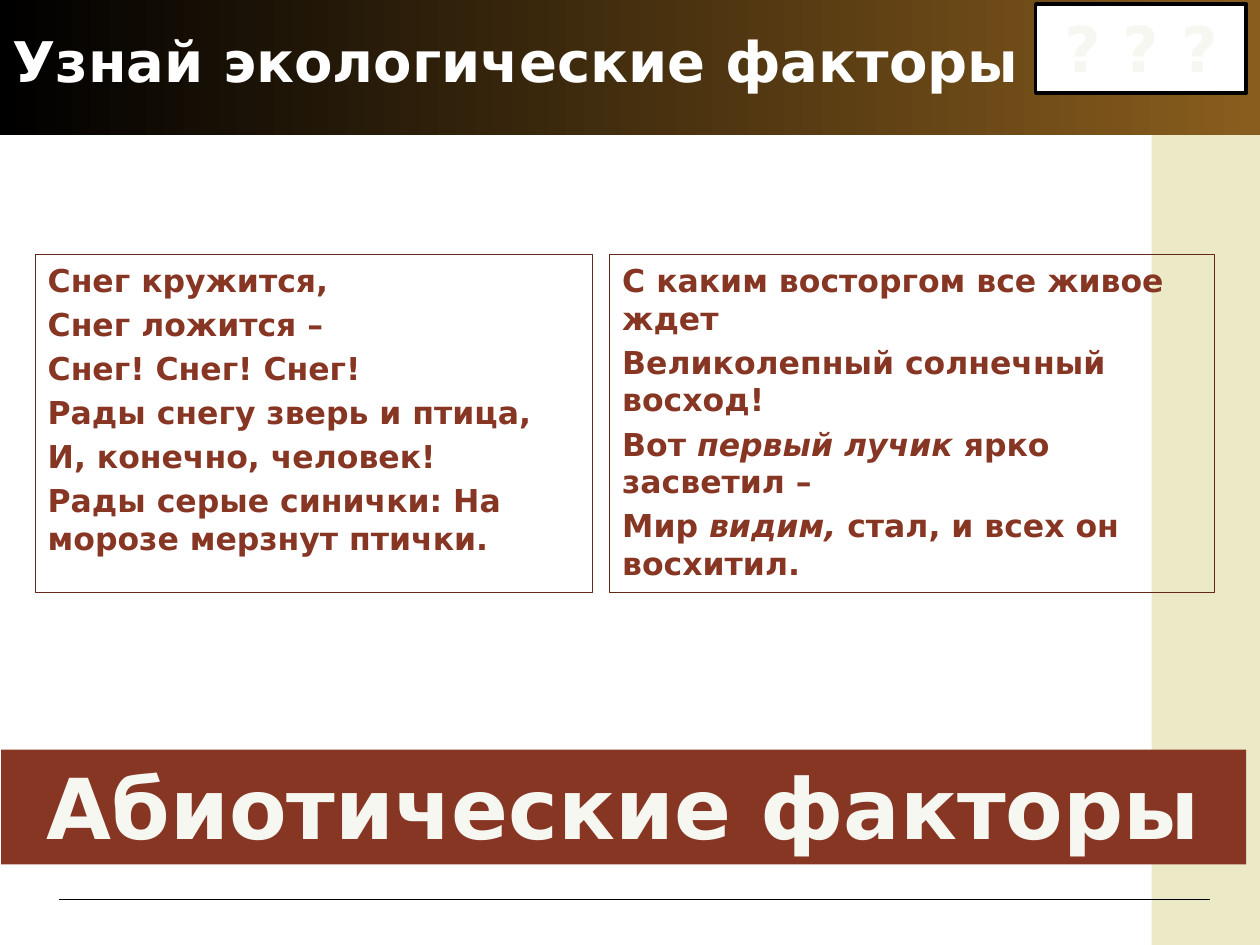
from dataclasses import dataclass

import pptx
import pptx.dml.color
import pptx.enum.shapes
import pptx.enum.text
import pptx.oxml.ns
import pptx.util
from lxml import etree

Inches = pptx.util.Inches
Pt = pptx.util.Pt
Align = pptx.enum.text.PP_ALIGN
Anchor = pptx.enum.text.MSO_ANCHOR


@dataclass(frozen=True)
class Theme:
    font: str = "DejaVu Sans"
    white: str = "FFFFFF"
    black: str = "000000"
    gold: str = "895D1D"
    sand: str = "ECE9C6"
    brick: str = "873624"
    brick_dark: str = "64281B"
    ivory: str = "F6F7F1"
    title_size: int = 32
    poem_size: int = 18
    question_size: int = 36
    answer_size: int = 48


THEME = Theme()

SNOW_POEM = [
    ["Снег кружится,"],
    ["Снег ложится –"],
    ["Снег! Снег! Снег!"],
    ["Рады снегу зверь и птица,"],
    ["И, конечно, человек!"],
    ["Рады серые синички: На морозе мерзнут птички."],
]
SUNRISE_POEM = [
    ["С каким восторгом все живое ждет"],
    ["Великолепный солнечный восход!"],
    ["Вот ", "первый лучик", " ярко засветил –"],
    ["Мир ", "видим,", " стал, и всех он восхитил."],
]


def rgb(value):
    return pptx.dml.color.RGBColor.from_string(value)


def add_box(slide, box, fill=None, line=None, line_width=0.75):
    shape = slide.shapes.add_shape(
        pptx.enum.shapes.MSO_SHAPE.RECTANGLE, *map(Inches, box)
    )
    shape.shadow.inherit = False
    if fill:
        shape.fill.solid()
        shape.fill.fore_color.rgb = rgb(fill)
    else:
        shape.fill.background()
    if line:
        shape.line.color.rgb = rgb(line)
        shape.line.width = Pt(line_width)
    else:
        shape.line.fill.background()
    return shape


def write_lines(shape, lines, size, color, align=Align.LEFT, anchor=Anchor.TOP):
    text_frame = shape.text_frame
    text_frame.word_wrap = True
    text_frame.vertical_anchor = anchor
    for index, parts in enumerate(lines):
        paragraph = text_frame.paragraphs[0] if index == 0 else text_frame.add_paragraph()
        paragraph.alignment = align
        if index:
            paragraph.space_before = Pt(0.2 * size)
        for position, part in enumerate(parts):
            run = paragraph.add_run()
            run.text = part
            run.font.name = THEME.font
            run.font.size = Pt(size)
            run.font.bold = True
            run.font.italic = position % 2 == 1
            run.font.color.rgb = rgb(color)


def add_backdrop(slide, box):
    left, top, width, height = box
    header_height, stripe_width = 1.07, 0.86
    add_box(
        slide,
        (left + width - stripe_width, top + header_height, stripe_width, height - header_height),
        THEME.sand,
    )
    rule_y = Inches(top + 7.14)
    rule = slide.shapes.add_connector(
        pptx.enum.shapes.MSO_CONNECTOR.STRAIGHT,
        Inches(left + 0.47), rule_y, Inches(left + 9.6), rule_y,
    )
    rule.line.color.rgb = rgb(THEME.black)
    rule.line.width = Pt(0.75)
    etree.SubElement(rule.element.spPr, pptx.oxml.ns.qn("a:effectLst"))


def add_header(slide, box):
    left, top, width, height = box
    band = add_box(slide, box)
    band.fill.gradient()
    band.fill.gradient_angle = 0
    for stop, color in zip(band.fill.gradient_stops, (THEME.black, THEME.gold)):
        stop.color.rgb = rgb(color)
    title = slide.shapes.add_textbox(Inches(left), Inches(top), Inches(8.32), Inches(0.96))
    write_lines(
        title, [["Узнай экологические факторы"]],
        THEME.title_size, THEME.white, anchor=Anchor.MIDDLE,
    )


def add_poem(slide, box, lines):
    shape = add_box(slide, box, line=THEME.brick_dark)
    write_lines(shape, lines, THEME.poem_size, THEME.brick)


def add_question(slide, box):
    shape = add_box(slide, box, THEME.white, THEME.black, 2)
    write_lines(shape, [["? ? ?"]], THEME.question_size, THEME.ivory, Align.CENTER)


def add_answer(slide, box):
    shape = add_box(slide, box, THEME.brick)
    write_lines(shape, [["Абиотические факторы"]], THEME.answer_size, THEME.ivory, Align.CENTER)


def main():
    presentation = pptx.Presentation()
    presentation.slide_width = Inches(10)
    presentation.slide_height = Inches(7.5)
    slide = presentation.slides.add_slide(presentation.slide_layouts[6])
    add_backdrop(slide, (0, 0, 10, 7.5))
    add_header(slide, (0, 0, 10, 1.07))
    add_poem(slide, (0.28, 2.02, 4.42, 2.68), SNOW_POEM)
    add_poem(slide, (4.84, 2.02, 4.8, 2.68), SUNRISE_POEM)
    add_question(slide, (8.22, 0.03, 1.67, 0.71))
    add_answer(slide, (0.01, 5.95, 9.88, 0.91))
    presentation.save("out.pptx")


if __name__ == "__main__":
    main()
